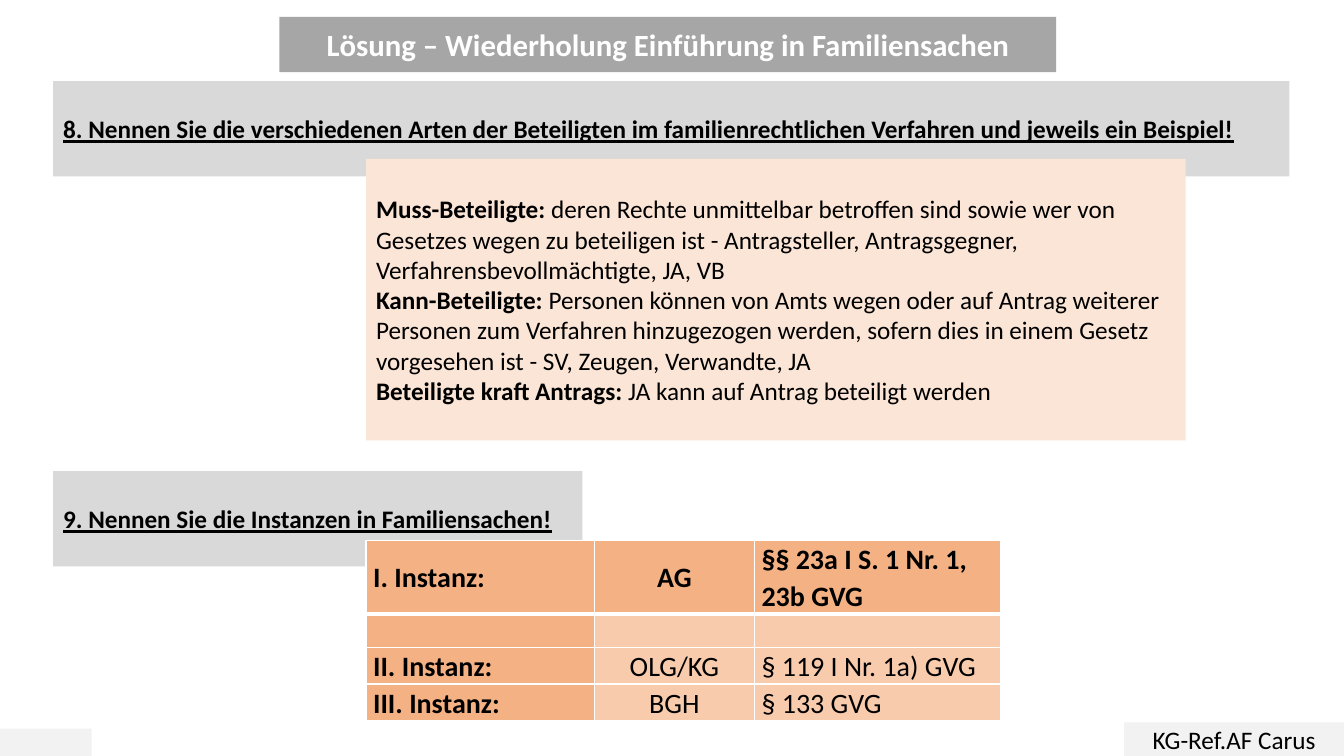
import pptx
import pptx.dml.color
import pptx.enum.shapes
import pptx.enum.text
import pptx.oxml
import pptx.oxml.ns
import pptx.util

Pt = pptx.util.Pt
Shape = pptx.enum.shapes.MSO_SHAPE
Align = pptx.enum.text.PP_ALIGN
Anchor = pptx.enum.text.MSO_ANCHOR

QUESTION_GREY = "D9D9D9"
TITLE_GREY = "A6A6A6"
FOOTER_GREY = "F2F2F2"
ANSWER_PEACH = "FBE5D6"
HEAD_ORANGE = "F4B183"
CELL_ORANGE = "F8CBAD"
BLACK = "000000"
WHITE = "FFFFFF"

TITLE = "Lösung – Wiederholung Einführung in Familiensachen"
QUESTIONS = [
    ("8. Nennen Sie die verschiedenen Arten der Beteiligten im "
     "familienrechtlichen Verfahren und jeweils ein Beispiel!", (38, 58, 883, 68)),
    ("9. Nennen Sie die Instanzen in Familiensachen!", (38, 336.5, 378, 68)),
]
PARTICIPANTS = [
    ("Muss-Beteiligte: ",
     "deren Rechte unmittelbar betroffen sind sowie wer von Gesetzes wegen zu beteiligen ist"
     " - Antragsteller, Antragsgegner, Verfahrensbevollmächtigte, JA, VB"),
    ("Kann-Beteiligte: ",
     "Personen können von Amts wegen oder auf Antrag weiterer Personen zum Verfahren hinzugezogen"
     " werden, sofern dies in einem Gesetz vorgesehen ist - SV, Zeugen, Verwandte, JA"),
    ("Beteiligte kraft Antrags: ", "JA kann auf Antrag beteiligt werden"),
]
INSTANCES = [
    ("I. Instanz:", "AG", "§§ 23a I S. 1 Nr. 1, 23b GVG"),
    ("", "", ""),
    ("II. Instanz:", "OLG/KG", "§ 119 I Nr. 1a) GVG"),
    ("III. Instanz:", "BGH", "§ 133 GVG"),
]


def color(hex_string):
    return pptx.dml.color.RGBColor.from_string(hex_string)


def fill(target, hex_string):
    target.fill.solid()
    target.fill.fore_color.rgb = color(hex_string)


class SlideBuilder:
    font_name = "Calibri"
    text_size = 18
    title_size = 22
    table_size = 20

    def __init__(self, slide):
        self.slide = slide

    def format(self, paragraph, size, hex_string=BLACK, bold=False, underline=False, align=Align.LEFT):
        paragraph.alignment = align
        font = paragraph.font
        font.name = self.font_name
        font.size = Pt(size)
        font.bold = bold
        font.underline = underline
        font.color.rgb = color(hex_string)

    def title(self, text, box):
        shape = self.slide.shapes.title
        shape.left, shape.top, shape.width, shape.height = map(Pt, box)
        outline = pptx.oxml.parse_xml(
            f'<a:prstGeom {pptx.oxml.ns.nsdecls("a")} prst="roundRect"><a:avLst/></a:prstGeom>')
        shape.element.spPr.append(outline)
        fill(shape, TITLE_GREY)
        frame = shape.text_frame
        frame.text = text
        frame.auto_size = pptx.enum.text.MSO_AUTO_SIZE.NONE
        frame.vertical_anchor = Anchor.MIDDLE
        self.format(frame.paragraphs[0], self.title_size, WHITE, bold=True, align=Align.CENTER)

    def panel(self, box, hex_string):
        shape = self.slide.shapes.add_shape(Shape.RECTANGLE, *map(Pt, box))
        shape.shadow.inherit = False
        fill(shape, hex_string)
        shape.line.fill.background()
        shape.text_frame.word_wrap = True
        shape.text_frame.vertical_anchor = Anchor.MIDDLE
        return shape

    def label(self, text, box, hex_string, **style):
        frame = self.panel(box, hex_string).text_frame
        frame.text = text
        self.format(frame.paragraphs[0], self.text_size, **style)

    def definitions(self, entries, box):
        frame = self.panel(box, ANSWER_PEACH).text_frame
        for index, (term, meaning) in enumerate(entries):
            paragraph = frame.add_paragraph() if index else frame.paragraphs[0]
            self.format(paragraph, self.text_size)
            term_run = paragraph.add_run()
            term_run.text = term
            term_run.font.bold = True
            paragraph.add_run().text = meaning

    def border(self, cell, side, width):
        properties = cell._tc.get_or_add_tcPr()
        line = pptx.oxml.parse_xml(
            f'<a:{side} {pptx.oxml.ns.nsdecls("a")} w="{Pt(width)}"><a:solidFill>'
            f'<a:srgbClr val="{WHITE}"/></a:solidFill></a:{side}>')
        properties.append(line)

    def table(self, rows, box, widths, heights):
        table = self.slide.shapes.add_table(len(rows), len(widths), *map(Pt, box)).table
        table.first_row = False
        table.horz_banding = False
        for column, width in zip(table.columns, widths):
            column.width = Pt(width)
        for row, height in zip(table.rows, heights):
            row.height = Pt(height)
        for row_index, texts in enumerate(rows):
            for column_index, text in enumerate(texts):
                cell = table.cell(row_index, column_index)
                is_head = row_index == 0 or column_index == 0
                cell.margin_left = cell.margin_right = Pt(5)
                cell.margin_top = cell.margin_bottom = 0
                cell.vertical_anchor = Anchor.MIDDLE
                for side in ("lnL", "lnR", "lnT", "lnB"):
                    thick = (row_index, side) in ((0, "lnB"), (1, "lnT"))
                    self.border(cell, side, 3 if thick else 1)
                fill(cell, HEAD_ORANGE if is_head else CELL_ORANGE)
                if text:
                    cell.text = text
                    paragraph = cell.text_frame.paragraphs[0]
                    paragraph.line_spacing = 1.07
                    self.format(paragraph, self.table_size, bold=is_head,
                                align=Align.CENTER if column_index == 1 else Align.LEFT)


def main():
    presentation = pptx.Presentation()
    presentation.slide_width = Pt(960)
    presentation.slide_height = Pt(540)
    slide = presentation.slides.add_slide(presentation.slide_layouts[5])
    builder = SlideBuilder(slide)
    builder.title(TITLE, (199.5, 12, 555, 39.5))
    for text, box in QUESTIONS:
        builder.label(text, box, QUESTION_GREY, bold=True, underline=True)
    builder.panel((0, 520.5, 65.5, 19.5), FOOTER_GREY)
    builder.label("KG-Ref.AF Carus", (803, 516, 157, 24), FOOTER_GREY, align=Align.CENTER)
    builder.definitions(PARTICIPANTS, (261.5, 113.5, 585.5, 201))
    builder.table(INSTANCES, (261.5, 386, 453, 120), (163, 114.5, 175.5), (48, 24, 24, 24))
    presentation.save("out.pptx")


if __name__ == "__main__":
    main()
